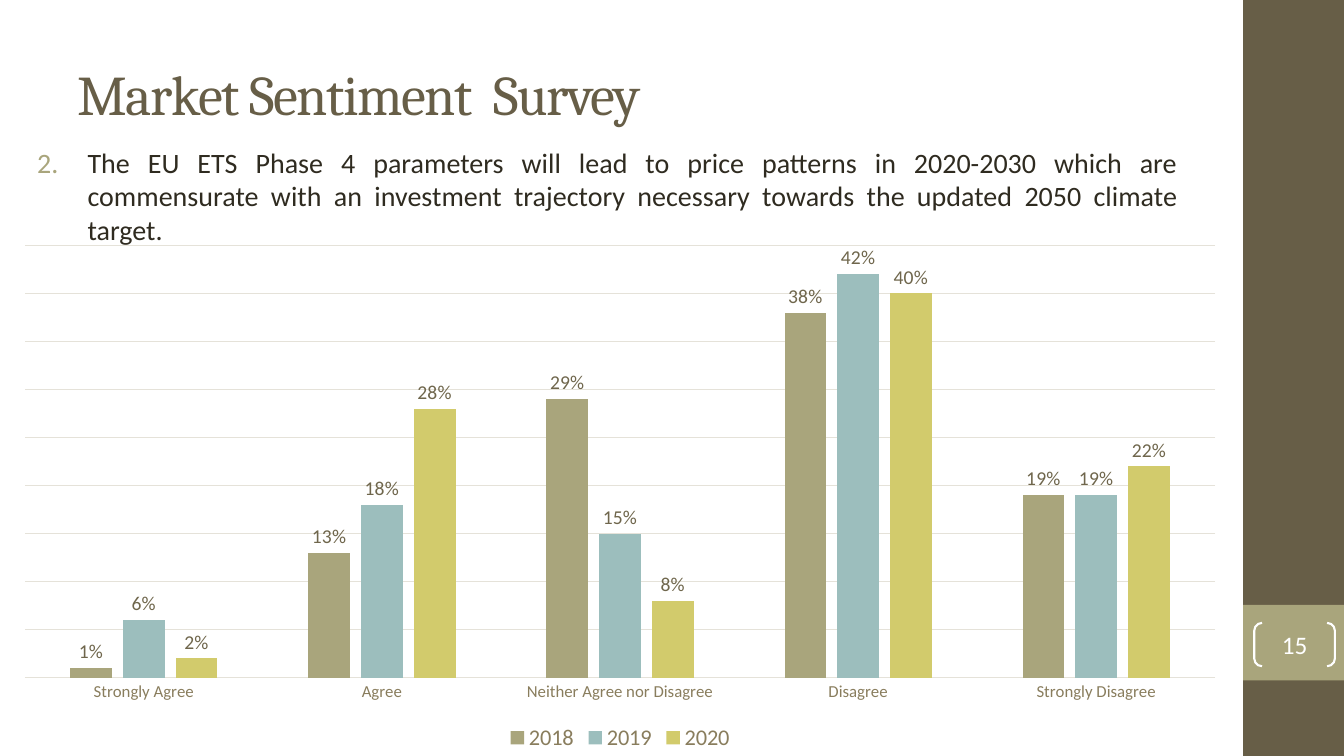
"""Builds the market sentiment survey slide with its yearly comparison chart."""
from lxml import etree
from pptx import Presentation
from pptx.chart.data import CategoryChartData
from pptx.dml.color import RGBColor
from pptx.enum.chart import XL_CHART_TYPE, XL_LABEL_POSITION, XL_LEGEND_POSITION, XL_TICK_MARK
from pptx.enum.shapes import MSO_SHAPE
from pptx.enum.text import MSO_ANCHOR, PP_ALIGN
from pptx.oxml import parse_xml
from pptx.oxml.ns import nsdecls, qn
from pptx.util import Inches, Pt

RECTANGLE, BRACKETS = MSO_SHAPE.RECTANGLE, MSO_SHAPE.DOUBLE_BRACKET
TOP, MIDDLE = MSO_ANCHOR.TOP, MSO_ANCHOR.MIDDLE
CENTER, JUSTIFY, LEFT = PP_ALIGN.CENTER, PP_ALIGN.JUSTIFY, PP_ALIGN.LEFT
COLUMNS = XL_CHART_TYPE.COLUMN_CLUSTERED
OUTSIDE_END = XL_LABEL_POSITION.OUTSIDE_END
BOTTOM = XL_LEGEND_POSITION.BOTTOM
NO_TICK = XL_TICK_MARK.NONE

COLORS = {
    "band": "675E47", "accent": "A9A57C", "white": "FFFFFF", "ink": "2F2B20",
    "axis": "897D5D", "grid": "E5E2D9", "label": "6F664C",
    "2018": "A9A57C", "2019": "9CBEBD", "2020": "D2CB6C",
}
ANSWERS = ["Strongly Agree", "Agree", "Neither Agree nor Disagree", "Disagree", "Strongly Disagree"]
SHARES = {
    "2018": [0.01, 0.13, 0.29, 0.38, 0.19],
    "2019": [0.06, 0.18, 0.15, 0.42, 0.19],
    "2020": [0.02, 0.28, 0.08, 0.4, 0.22],
}
QUESTION = (
    "The EU ETS Phase 4 parameters will lead to price patterns in 2020-2030 which are "
    "commensurate with an investment trajectory necessary towards the updated 2050 climate target."
)


def color(name):
    """Return the named colour."""
    return RGBColor.from_string(COLORS[name])


def apply(target, values):
    """Set each format value on the target."""
    for attribute, value in values.items():
        setattr(target, attribute, value)


def set_font(font, size, color_name, face="Calibri"):
    """Set the size, colour and face of a font."""
    apply(font, {"size": Pt(size), "name": face, "bold": False})
    font.color.rgb = color(color_name)


def set_line(line, color_name, width):
    """Set the colour and width of a line."""
    line.color.rgb = color(color_name)
    line.width = Pt(width)


def write(frame, text, size, color_name, face="Calibri", anchor=TOP, align=LEFT):
    """Write one paragraph into a text frame and return it."""
    apply(frame, {"word_wrap": True, "vertical_anchor": anchor})
    paragraph = frame.paragraphs[0]
    paragraph.alignment = align
    run = paragraph.add_run()
    run.text = text
    set_font(run.font, size, color_name, face)
    return paragraph


def add_block(slide, box, color_name):
    """Add a plain filled rectangle."""
    block = slide.shapes.add_shape(RECTANGLE, *map(Inches, box))
    block.shadow.inherit = False
    block.fill.solid()
    block.fill.fore_color.rgb = color(color_name)
    block.line.fill.background()


def add_sidebar(slide, box, number):
    """Add the side band with its bracketed page number."""
    left, top, width, height = box
    add_block(slide, box, "band")
    add_block(slide, (left, top + 0.8 * height, width, 0.1 * height), "accent")
    page = slide.shapes.add_shape(
        BRACKETS, *map(Inches, (left + 0.11, top + 6.18, width - 0.2, 0.43)))
    page.shadow.inherit = False
    page.adjustments[0] = 0.18
    page.fill.background()
    set_line(page.line, "white", 1.5)
    margins = ("margin_left", "margin_top", "margin_right", "margin_bottom")
    apply(page.text_frame, dict.fromkeys(margins, 0))
    write(page.text_frame, number, 18, "white", anchor=MIDDLE, align=CENTER)


def add_title(slide, box, text):
    """Add the slide title."""
    title = slide.shapes.add_textbox(*map(Inches, box))
    paragraph = write(title.text_frame, text, 40, "band", "Cambria", MIDDLE)
    paragraph.runs[0].font._element.set("spc", "-100")


def add_question(slide, box, text, number):
    """Add the numbered survey question."""
    question = slide.shapes.add_textbox(*map(Inches, box))
    paragraph = write(question.text_frame, text, 20, "ink", align=JUSTIFY)
    paragraph.space_before = Pt(4)
    properties = paragraph._p.get_or_add_pPr()
    properties.set("marL", str(Inches(0.62)))
    properties.set("indent", str(Inches(-0.5)))
    bullet_color = etree.SubElement(properties, qn("a:buClr"))
    etree.SubElement(bullet_color, qn("a:srgbClr"), val=COLORS["accent"])
    etree.SubElement(properties, qn("a:buFont"), typeface="+mj-lt")
    etree.SubElement(properties, qn("a:buAutoNum"), type="arabicPeriod", startAt=str(number))


def place_plot(chart, x, y, w, h):
    """Fix the inner plot area as fractions of the chart."""
    plot_area = chart._chartSpace.chart.plotArea
    for old_layout in plot_area.findall(qn("c:layout")):
        plot_area.remove(old_layout)
    sizes = "".join(f'<c:{key} val="{value}"/>' for key, value in zip("xywh", (x, y, w, h)))
    plot_area.insert(0, parse_xml(
        f'<c:layout {nsdecls("c")}><c:manualLayout><c:layoutTarget val="inner"/>'
        f'<c:xMode val="edge"/><c:yMode val="edge"/>{sizes}</c:manualLayout></c:layout>'))


def add_survey_chart(slide, box):
    """Add the clustered columns of answers by year."""
    survey = CategoryChartData(number_format="0%")
    survey.categories = ANSWERS
    for year, shares in SHARES.items():
        survey.add_series(year, shares)
    chart = slide.shapes.add_chart(COLUMNS, *map(Inches, box), survey).chart
    apply(chart, {"has_title": False, "has_legend": True})
    set_font(chart.font, 10, "ink")
    apply(chart.legend, {"position": BOTTOM, "include_in_layout": False})
    set_font(chart.legend.font, 16, "axis")

    answer_axis, share_axis = chart.category_axis, chart.value_axis
    apply(answer_axis, {"major_tick_mark": NO_TICK, "minor_tick_mark": NO_TICK})
    set_font(answer_axis.tick_labels.font, 12, "axis")
    set_line(answer_axis.format.line, "grid", 0.75)
    apply(share_axis, {"visible": False, "has_major_gridlines": True, "minimum_scale": 0,
                       "maximum_scale": 0.45, "major_unit": 0.05})
    set_line(share_axis.major_gridlines.format.line, "grid", 0.75)

    columns = chart.plots[0]
    apply(columns, {"gap_width": 219, "overlap": -27, "vary_by_categories": False})
    for year in columns.series:
        year.format.fill.solid()
        year.format.fill.fore_color.rgb = color(year.name)
        labels = year.data_labels
        apply(labels, {"show_value": True, "position": OUTSIDE_END,
                       "number_format": "0%", "number_format_is_linked": False})
        set_font(labels.font, 14, "label")
    place_plot(chart, 0.02, 0.02, 0.96, 0.83)


def main():
    """Build and save the slide."""
    deck = Presentation()
    apply(deck, {"slide_width": Inches(13.33), "slide_height": Inches(7.5)})
    slide = deck.slides.add_slide(deck.slide_layouts[6])
    add_sidebar(slide, (12.33, 0, 1, 7.5), "15")
    add_title(slide, (0.67, 0.3, 11.11, 1.25), "Market Sentiment  Survey")
    add_question(slide, (0.15, 1.39, 11.63, 0.32), QUESTION, 2)
    add_survey_chart(slide, (0, 2.33, 12.3, 5.17))
    deck.save("out.pptx")


if __name__ == "__main__":
    main()
